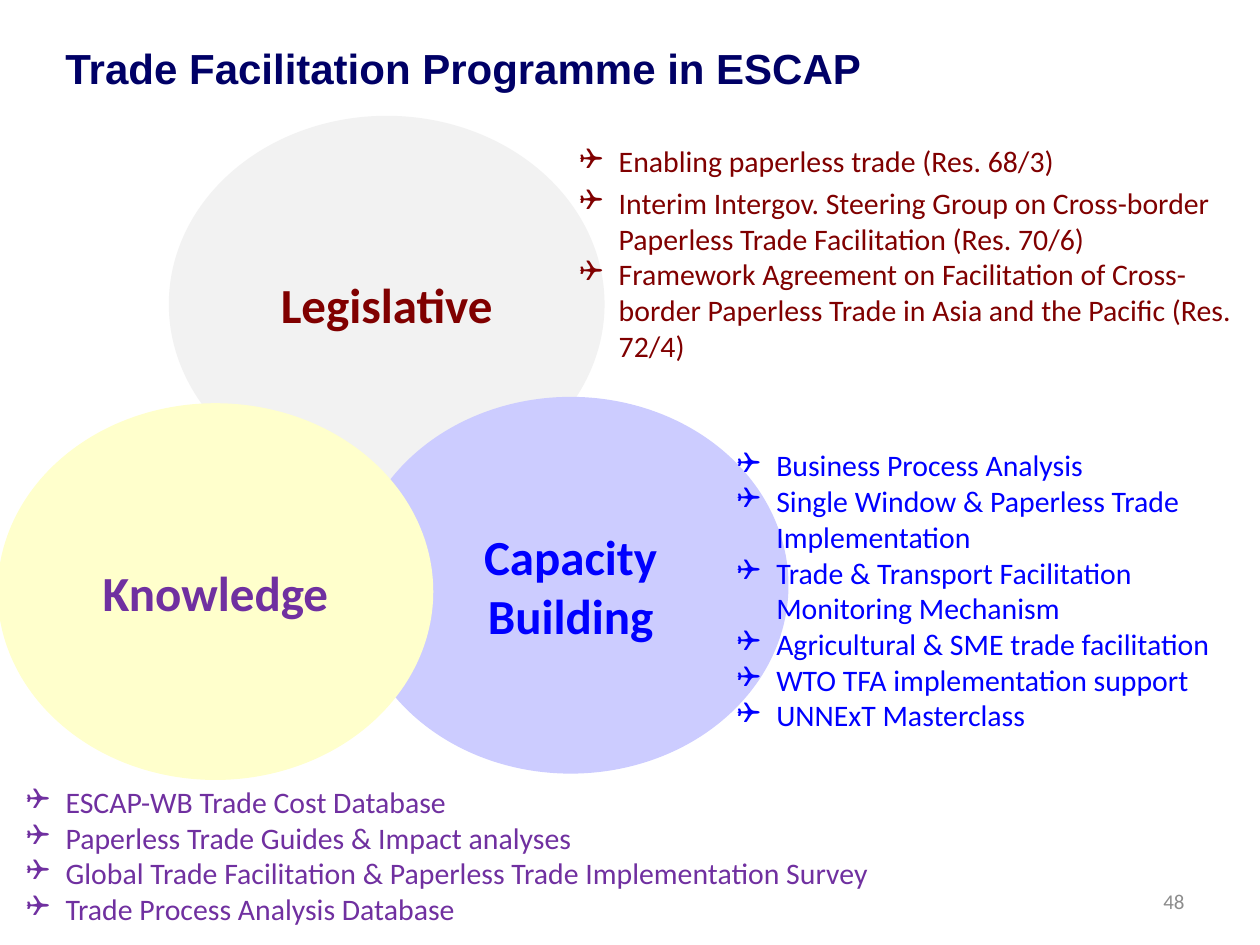
from lxml import etree
from pptx import Presentation
from pptx.dml.color import RGBColor
from pptx.enum import shapes, text
from pptx.oxml import ns
from pptx.util import Pt

NAVY = RGBColor(0x00, 0x00, 0x66)
MAROON = RGBColor(0x80, 0x00, 0x00)
BLUE = RGBColor(0x00, 0x00, 0xFF)
PURPLE = RGBColor(0x70, 0x30, 0xA0)
GREY = RGBColor(0x8C, 0x8C, 0x8C)
PALE_GREY = RGBColor(0xF2, 0xF2, 0xF2)
PALE_BLUE = RGBColor(0xCC, 0xCC, 0xFF)
PALE_YELLOW = RGBColor(0xFF, 0xFF, 0xCC)

# Content: places are in points
TITLE = "Trade Facilitation Programme in ESCAP"
PAGE_NUMBER = "48"
CIRCLE_SIZE = (249, 215.3)
INDENT = 22.5
CIRCLES = [  # label, left, top, fill, text colour
    ("Legislative", 96.5, 66.2, PALE_GREY, MAROON),
    ("Capacity\nBuilding", 201.6, 226.8, PALE_BLUE, BLUE),
    ("Knowledge", -1.4, 230.4, PALE_YELLOW, PURPLE),
]
LISTS = [  # left, top, width, height, colour, items
    (324, 80.6, 393.1, 131.8, MAROON, [
        "Enabling paperless trade (Res. 68/3)",
        "Interim Intergov. Steering Group on Cross-border Paperless Trade "
        "Facilitation (Res. 70/6)",
        "Framework Agreement on Facilitation of Cross-border Paperless Trade "
        "in Asia and the Pacific (Res. 72/4)",
    ]),
    (7.9, 444.2, 578.2, 90, PURPLE, [
        "ESCAP-WB Trade Cost Database",
        "Paperless Trade Guides & Impact analyses",
        "Global Trade Facilitation & Paperless Trade Implementation Survey",
        "Trade Process Analysis Database",
    ]),
    (414, 252, 308.2, 172.1, BLUE, [
        "Business Process Analysis",
        "Single Window & Paperless Trade Implementation",
        "Trade & Transport Facilitation Monitoring Mechanism",
        "Agricultural & SME trade facilitation",
        "WTO TFA implementation support",
        "UNNExT Masterclass",
    ]),
]


def format_text(frame, size, color, align, name="Calibri", bold=False):
    frame.word_wrap = True
    for para in frame.paragraphs:
        para.alignment = align
        for span in para.runs:
            font = span.font
            font.name, font.size, font.bold = name, Pt(size), bold
            font.color.rgb = color


def add_bullet(para):
    props = para._p.get_or_add_pPr()
    props.set("marL", str(Pt(INDENT)))
    props.set("indent", str(-Pt(INDENT)))
    etree.SubElement(props, ns.qn("a:buFont")).set("typeface", "Wingdings")
    etree.SubElement(props, ns.qn("a:buChar")).set("char", "❑")


def add_text(page, words, left, top, width, height):
    box = page.shapes.add_textbox(Pt(left), Pt(top), Pt(width), Pt(height))
    box.text_frame.text = words
    return box.text_frame


def add_circle(page, label, left, top, fill, color):
    width, height = CIRCLE_SIZE
    circle = page.shapes.add_shape(shapes.MSO_SHAPE.OVAL, Pt(left), Pt(top),
                                   Pt(width), Pt(height))
    circle.shadow.inherit = False
    circle.fill.solid()
    circle.fill.fore_color.rgb = fill
    circle.line.fill.background()
    circle.text_frame.text = label
    circle.text_frame.vertical_anchor = text.MSO_ANCHOR.MIDDLE
    format_text(circle.text_frame, 28, color, text.PP_ALIGN.CENTER, bold=True)


def main():
    deck = Presentation()
    deck.slide_width, deck.slide_height = Pt(720), Pt(540)
    page = deck.slides.add_slide(deck.slide_layouts[5])

    # Title
    title = page.shapes.title
    title.left, title.top, title.width, title.height = Pt(30.2), Pt(20.9), Pt(489.6), Pt(38.9)
    title.text_frame.text = TITLE
    title.text_frame.auto_size = text.MSO_AUTO_SIZE.NONE
    title.text_frame.vertical_anchor = text.MSO_ANCHOR.TOP
    format_text(title.text_frame, 24, NAVY, text.PP_ALIGN.LEFT, "Arial", True)

    # Overlapping circles
    for circle in CIRCLES:
        add_circle(page, *circle)

    # Bulleted lists
    for left, top, width, height, color, items in LISTS:
        frame = add_text(page, "\n".join(items), left, top, width, height)
        for para in frame.paragraphs:
            add_bullet(para)
        format_text(frame, 17, color, text.PP_ALIGN.LEFT)
        if color == MAROON:
            frame.paragraphs[0].line_spacing = 0.9
            frame.paragraphs[0].space_after = Pt(3)

    # Page number
    frame = add_text(page, PAGE_NUMBER, 516.2, 500.4, 167.8, 28.8)
    frame.vertical_anchor = text.MSO_ANCHOR.MIDDLE
    format_text(frame, 12, GREY, text.PP_ALIGN.RIGHT)

    deck.save("out.pptx")


if __name__ == "__main__":
    main()
